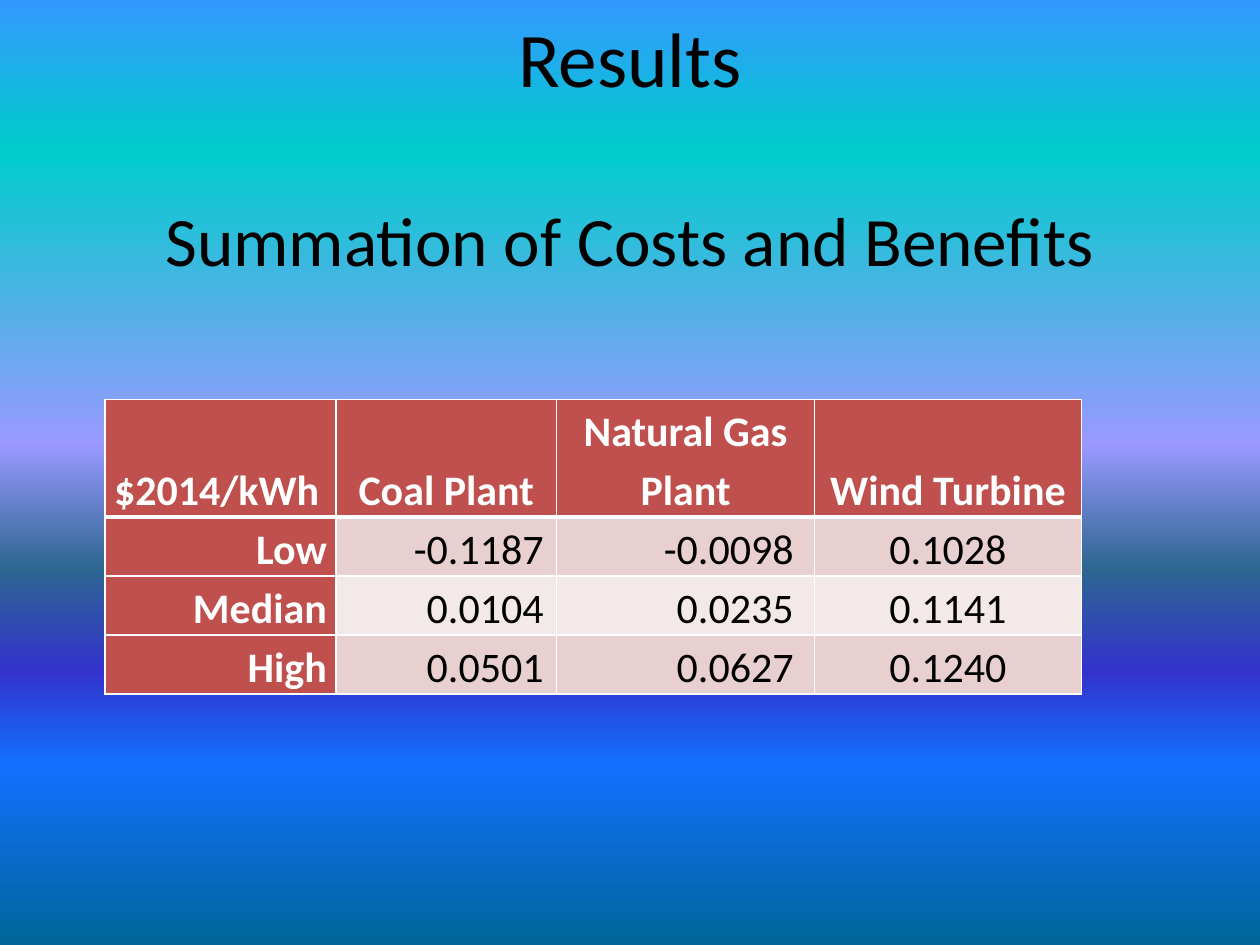
from lxml import etree
from pptx import Presentation
from pptx import util as u
from pptx.dml import color
from pptx.enum import text
from pptx.oxml import ns

STOPS = [(0, "3399FF"), (16, "00CCCC"), (47, "9999FF"), (60, "2E6792"),
         (71, "3333CC"), (81, "1170FF"), (100, "006699")]
TITLE_LINES = [("Results", 44.1, 0), ("Summation of Costs and Benefits", 39.6, 54)]
COSTS = [
    ["$2014/kWh", "Coal Plant", "Natural Gas Plant", "Wind Turbine"],
    ["Low", "-0.1187", "-0.0098", "0.1028"],
    ["Median", "0.0104", "0.0235", "0.1141"],
    ["High", "0.0501", "0.0627", "0.1240"],
]
COLUMN_WIDTHS = [4.65, 4.45, 5.2, 5.38]
ROW_HEIGHTS = [2.36, 1.18, 1.18, 1.18]
NUMBER_INDENTS = {1: 0.26, 2: 0.42}
RED, BANDS = "C0504D", ["F4E9E9", "E8D0D0"]
LEFT, CENTER, RIGHT = (text.PP_ALIGN.LEFT, text.PP_ALIGN.CENTER, text.PP_ALIGN.RIGHT)


def rgb(value):
    """Return the colour of a hex string."""
    return color.RGBColor.from_string(value)


def apply(target, values):
    """Set each attribute in a dict of format values."""
    for name, value in values.items():
        setattr(target, name, value)


def write(para, words, size, hex_color, bold=False, **layout):
    """Write one formatted run into a paragraph."""
    apply(para, layout)
    span = para.add_run()
    span.text = words
    apply(span.font, {"name": "Calibri", "size": u.Pt(size), "bold": bold})
    span.font.color.rgb = rgb(hex_color)


def add_color(parent, hex_color):
    """Append a plain colour element."""
    etree.SubElement(parent, ns.qn("a:srgbClr"), val=hex_color)


def paint_background(page):
    """Fill the page with a gradient from top to bottom."""
    fill = page.background.fill
    fill.gradient()
    fill.gradient_angle = 270
    stop_list = page.element.xpath(".//a:gsLst")[0]
    for old in list(stop_list):
        stop_list.remove(old)
    for percent, hex_color in STOPS:
        add_color(etree.SubElement(stop_list, ns.qn("a:gs"), pos=str(percent * 1000)), hex_color)


def place_title(page, left, top, width, height):
    """Place the two-line title in its box."""
    title = page.shapes.title
    apply(title, {"left": left, "top": top, "width": width, "height": height})
    frame = title.text_frame
    apply(frame, {"word_wrap": True, "auto_size": text.MSO_AUTO_SIZE.NONE,
                  "vertical_anchor": text.MSO_ANCHOR.MIDDLE})
    for index, (words, size, gap) in enumerate(TITLE_LINES):
        para = frame.add_paragraph() if index else frame.paragraphs[0]
        write(para, words, size, "000000", alignment=CENTER, space_before=u.Pt(gap))


def draw_borders(cell, row):
    """Give a cell white borders, thick below the header."""
    widths = {"L": 1, "R": 1, "T": 3 if row == 1 else 1, "B": 3 if row == 0 else 1}
    properties = cell._tc.get_or_add_tcPr()
    for index, (side, points) in enumerate(widths.items()):
        line = etree.Element(ns.qn(f"a:ln{side}"), w=str(u.Pt(points)))
        add_color(etree.SubElement(line, ns.qn("a:solidFill")), "FFFFFF")
        properties.insert(index, line)


def alignment_of(row, column):
    """Return the alignment of a cell's text."""
    if row == 0:
        return CENTER if column else LEFT
    return CENTER if column == 3 else RIGHT


def place_table(page, left, top):
    """Place the cost table with its corner at the given point."""
    table = page.shapes.add_table(
        len(ROW_HEIGHTS), len(COLUMN_WIDTHS), left, top,
        u.Cm(sum(COLUMN_WIDTHS)), u.Cm(sum(ROW_HEIGHTS))).table
    for column, width in zip(table.columns, COLUMN_WIDTHS):
        column.width = u.Cm(width)
    for row, height in zip(table.rows, ROW_HEIGHTS):
        row.height = u.Cm(height)
    for row, values in enumerate(COSTS):
        for column, words in enumerate(values):
            cell = table.cell(row, column)
            heading = row == 0 or column == 0
            indent = 0.18 if heading else NUMBER_INDENTS.get(column, 0.18)
            apply(cell, {"margin_left": u.Cm(0.18), "margin_right": u.Cm(indent),
                         "margin_top": 0, "margin_bottom": 0,
                         "vertical_anchor": text.MSO_ANCHOR.BOTTOM})
            cell.fill.solid()
            cell.fill.fore_color.rgb = rgb(RED if heading else BANDS[row % 2])
            draw_borders(cell, row)
            write(cell.text_frame.paragraphs[0], words, 24,
                  "FFFFFF" if heading else "000000", heading,
                  alignment=alignment_of(row, column), line_spacing=1.15)


def main():
    """Build and save the deck."""
    deck = Presentation()
    apply(deck, {"slide_width": u.Cm(25.4), "slide_height": u.Cm(19.05)})
    page = deck.slides.add_slide(deck.slide_layouts.get_by_name("Title Only"))
    paint_background(page)
    place_title(page, u.Cm(1.27), u.Cm(0.56), u.Cm(22.86), u.Cm(4.75))
    place_table(page, u.Cm(2.12), u.Cm(8.05))
    deck.save("out.pptx")


if __name__ == "__main__":
    main()
